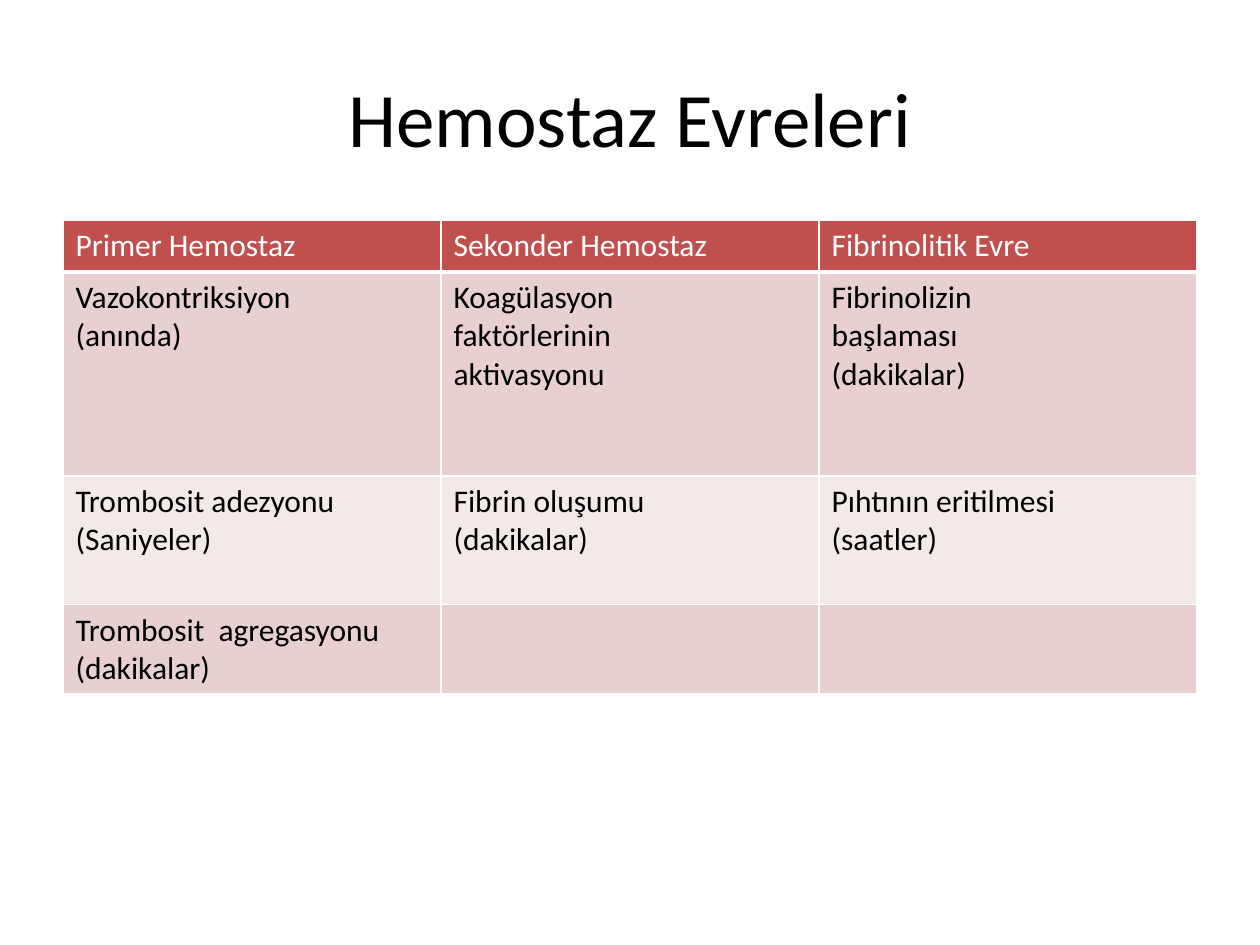
from lxml.etree import SubElement
from pptx import Presentation
from pptx.dml.color import RGBColor
from pptx.enum.text import MSO_ANCHOR, PP_ALIGN
from pptx.oxml.ns import qn
from pptx.util import Inches, Pt

COLORS = {"text": "000000", "white": "FFFFFF", "header": "C0504D",
          "odd": "E8D0D0", "even": "F4E9E9"}
ROW_HEIGHTS = [0.41, 1.62, 1.02, 0.7]
ROWS = [
    ["Primer Hemostaz", "Sekonder Hemostaz", "Fibrinolitik Evre"],
    ["Vazokontriksiyon\n(anında)", "Koagülasyon\nfaktörlerinin\naktivasyonu",
     "Fibrinolizin\nbaşlaması\n(dakikalar)"],
    ["Trombosit adezyonu\n(Saniyeler)", "Fibrin oluşumu\n(dakikalar)",
     "Pıhtının eritilmesi\n(saatler)"],
    ["Trombosit  agregasyonu\n(dakikalar)", "", ""],
]


def write_text(tf, text, size=18, color="text", align=PP_ALIGN.LEFT):
    """Write each line of text as a formatted paragraph."""
    for i, line in enumerate(text.split("\n")):
        p = tf.paragraphs[0] if i == 0 else tf.add_paragraph()
        p.alignment = align
        r = p.add_run()
        r.text = line
        r.font.name = "Calibri"
        r.font.size = Pt(size)
        r.font.color.rgb = RGBColor.from_string(COLORS[color])


def set_borders(cell, **widths):
    """Draw white cell borders with the given widths in points."""
    tc_pr = cell._tc.get_or_add_tcPr()
    for side in "LRTB":
        ln = SubElement(tc_pr, qn(f"a:ln{side}"), w=str(Pt(widths.get(side, 1))))
        fill = SubElement(ln, qn("a:solidFill"))
        SubElement(fill, qn("a:srgbClr"), val=COLORS["white"])


def add_title(s, text):
    """Place and fill the title placeholder."""
    sp = s.shapes.title
    sp.left, sp.top, sp.width, sp.height = map(Inches, (0.5, 0.3, 9, 1.25))
    sp.text_frame.vertical_anchor = MSO_ANCHOR.MIDDLE
    write_text(sp.text_frame, text, size=44, align=PP_ALIGN.CENTER)


def add_phase_table(s, rows, heights):
    """Add the table with a header row and banded body rows."""
    table = s.shapes.add_table(len(rows), len(rows[0]), Inches(0.5), Inches(1.75),
                               Inches(9), Inches(sum(heights))).table
    for i, (texts, height) in enumerate(zip(rows, heights)):
        table.rows[i].height = Inches(height)
        band = "header" if i == 0 else "odd" if i % 2 else "even"
        for j, text in enumerate(texts):
            cell = table.cell(i, j)
            set_borders(cell, T=3 if i == 1 else 1, B=3 if i == 0 else 1)
            cell.fill.solid()
            cell.fill.fore_color.rgb = RGBColor.from_string(COLORS[band])
            if text:
                write_text(cell.text_frame, text, color="text" if i else "white")
                for p in cell.text_frame.paragraphs:
                    p.font.bold = False
                    for r in p.runs:
                        r.font.bold = False


def main():
    """Build the slide and save it."""
    prs = Presentation()
    prs.slide_width, prs.slide_height = Inches(10), Inches(7.5)
    s = prs.slides.add_slide(prs.slide_layouts[5])
    add_title(s, "Hemostaz Evreleri")
    add_phase_table(s, ROWS, ROW_HEIGHTS)
    prs.save("out.pptx")


if __name__ == "__main__":
    main()
